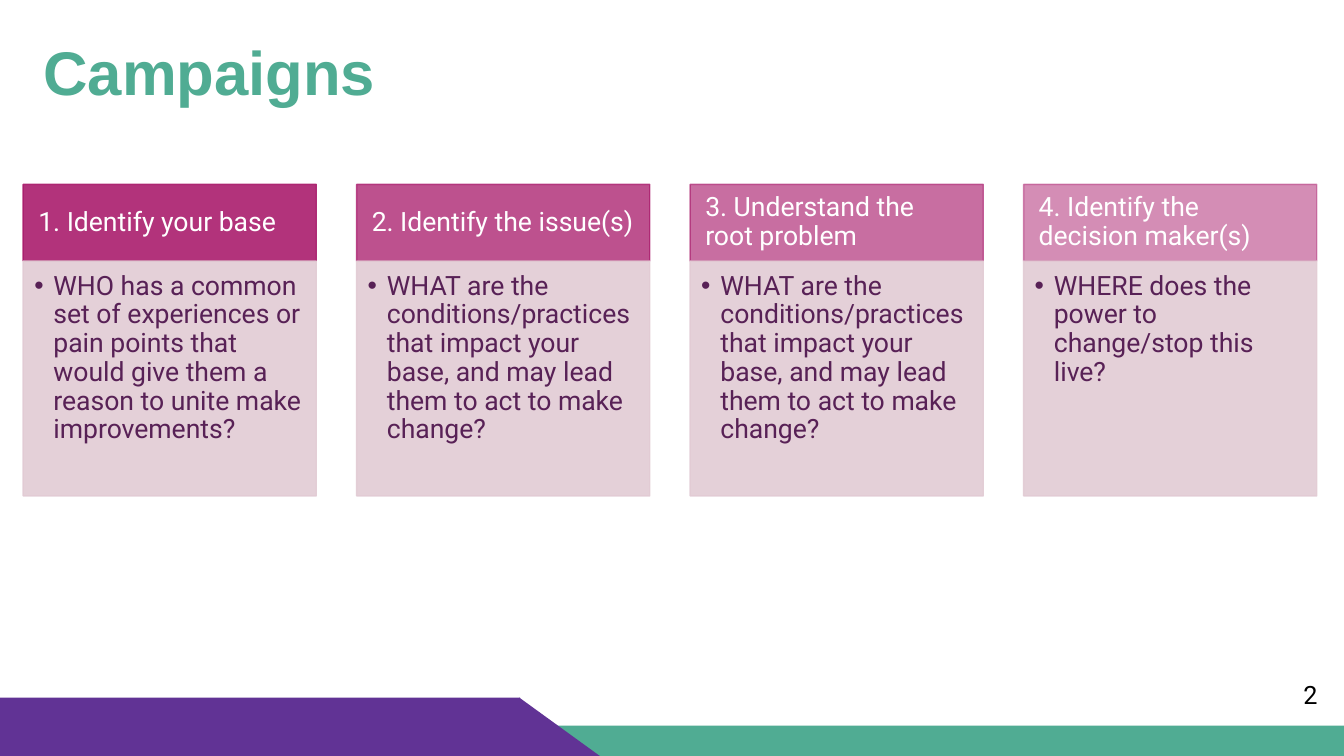
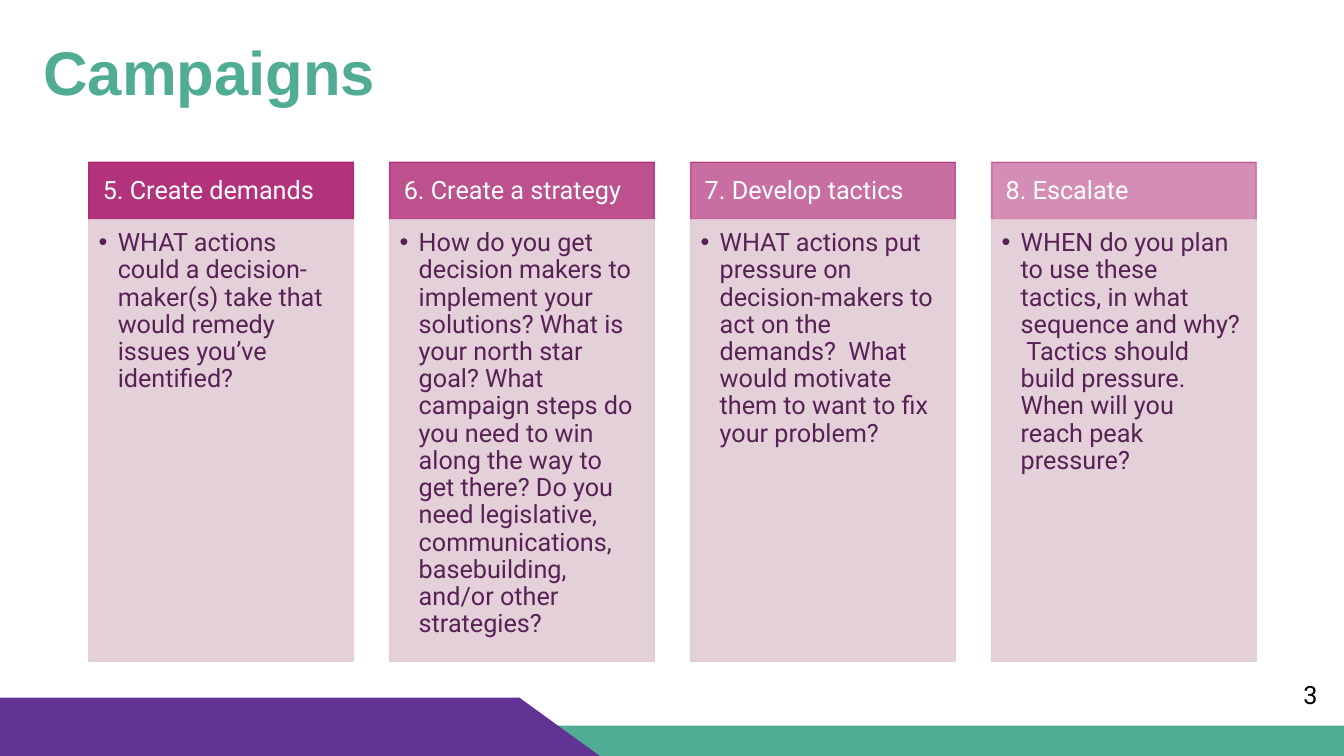
from lxml import etree
from pptx import Presentation
from pptx.dml.color import RGBColor
from pptx.enum import shapes, text
from pptx.oxml import ns
from pptx.util import Inches, Pt

GREEN, PURPLE = "50AC93", "613395"
PINK, PALE, PLUM = "AA1D6D", "E2CBD4", "582156"
WHITE, BLACK = "FFFFFF", "000000"
FADES = (90, 77, 64, 50)
RECT = shapes.MSO_SHAPE.RECTANGLE
TRI = shapes.MSO_SHAPE.RIGHT_TRIANGLE

STEPS = [
    ("1. Identify your base",
     "WHO has a common set of experiences or pain points that would give them "
     "a reason to unite make improvements?"),
    ("2. Identify the issue(s)",
     "WHAT are the conditions/practices that impact your base, and may lead "
     "them to act to make change?"),
    ("3. Understand the root problem",
     "WHAT are the conditions/practices that impact your base, and may lead "
     "them to act to make change?"),
    ("4. Identify the decision maker(s)",
     "WHERE does the power to change/stop this live?"),
]
ACTIONS = [
    ("5. Create demands",
     "WHAT actions could a decision-maker(s) take that would remedy issues "
     "you’ve identified?"),
    ("6. Create a strategy",
     "How do you get decision makers to implement your solutions? What is "
     "your north star goal? What campaign steps do you need to win along the "
     "way to get there? Do you need legislative, communications, "
     "basebuilding, and/or other strategies?"),
    ("7. Develop tactics",
     "WHAT actions put pressure on decision-makers to act on the demands?  "
     "What would motivate them to want to fix your problem?"),
    ("8. Escalate",
     "WHEN do you plan to use these tactics, in what sequence and why?  "
     "Tactics should build pressure.  When will you reach peak pressure?"),
]


def rgb(code):
    return RGBColor.from_string(code)


def fade(paint, pct):
    """Make a solid fill, of a shape or a line, partly transparent."""
    tone = paint._xPr.find(ns.qn("a:solidFill"))[0]
    etree.SubElement(tone, ns.qn("a:alpha")).set("val", str(pct * 1000))


def block(slide, kind, box, color, alpha=None):
    shape = slide.shapes.add_shape(kind, *map(Inches, box))
    shape.shadow.inherit = False
    shape.fill.solid()
    shape.fill.fore_color.rgb = rgb(color)
    if alpha is None:
        shape.line.fill.background()
    else:
        shape.line.color.rgb = rgb(color)
        shape.line.width = Pt(1)
        fade(shape.fill, alpha)
        fade(shape.line.fill, alpha)
    return shape


def write(shape, words, size, color, pads=(0.1, 0.05, 0.1, 0.05),
          font="Roboto", bold=False, middle=False, wrap=True):
    frame = shape.text_frame
    frame.text = words
    frame.word_wrap = wrap
    frame.auto_size = text.MSO_AUTO_SIZE.NONE
    anchor = text.MSO_ANCHOR
    frame.vertical_anchor = anchor.MIDDLE if middle else anchor.TOP
    (frame.margin_left, frame.margin_top,
     frame.margin_right, frame.margin_bottom) = map(Inches, pads)
    para = frame.paragraphs[0]
    para.alignment = text.PP_ALIGN.LEFT
    para.line_spacing = 0.9
    face = para.runs[0].font
    face.name, face.size, face.bold = font, Pt(size), bold
    face.color.rgb = rgb(color)
    return para


def bullet(para, indent):
    props = para._p.get_or_add_pPr()
    props.set("marL", str(Inches(indent)))
    props.set("indent", str(-Inches(indent)))
    etree.SubElement(props, ns.qn("a:buFont")).set("typeface", "Arial")
    etree.SubElement(props, ns.qn("a:buChar")).set("char", "•")


def card(slide, box, head, item, words, size, alpha):
    """Place a heading of height head above a bulleted panel."""
    left, top, width, height = box
    side = 0.15 if size > 18 else 0.14
    near = side - 0.04
    bar = block(slide, RECT, (left, top, width, head), PINK, alpha)
    write(bar, item, size, WHITE, (side, 0.08, side, 0.08), middle=True)
    panel = block(slide, RECT, (left, top + head, width, height - head),
                  PALE, 90)
    para = write(panel, words, size, PLUM, (near, near, side, side + 0.02))
    bullet(para, 0.19)


def cards(slide, box, head, gap, items, size):
    left, top, width, height = box
    wide = (width - gap * (len(items) - 1)) / len(items)
    for i, (item, words) in enumerate(items):
        spot = (left + i * (wide + gap), top, wide, height)
        card(slide, spot, head, item, words, size, FADES[i])


def base(deck, number):
    """Add a slide with its title, bottom bands and page number."""
    slide = deck.slides.add_slide(deck.slide_layouts.get_by_name("Title Only"))
    block(slide, RECT, (0, 7.2, 13.33, 0.3), GREEN)
    block(slide, RECT, (0, 6.92, 5.16, 0.58), PURPLE)
    block(slide, TRI, (5.15, 6.92, 0.8, 0.58), PURPLE)
    title = slide.shapes.title
    title.left, title.top, title.width, title.height = map(
        Inches, (0.33, 0.33, 3.67, 0.84))
    write(title, "Campaigns", 44, GREEN, font="Arial", bold=True, middle=True)
    page = slide.shapes.add_textbox(
        *map(Inches, (12.83, 6.69, 0.5, 0.4)))
    write(page, str(number), 18, BLACK, wrap=False).line_spacing = 1.0
    return slide


def main():
    deck = Presentation()
    deck.slide_width, deck.slide_height = Inches(13.33), Inches(7.5)
    cards(base(deck, 2), (0.23, 1.83, 12.83, 3.09), 0.76, 0.4, STEPS, 19)
    cards(base(deck, 3), (0.88, 1.61, 11.58, 4.95), 0.57, 0.36, ACTIONS, 18)
    deck.save("out.pptx")


if __name__ == "__main__":
    main()
